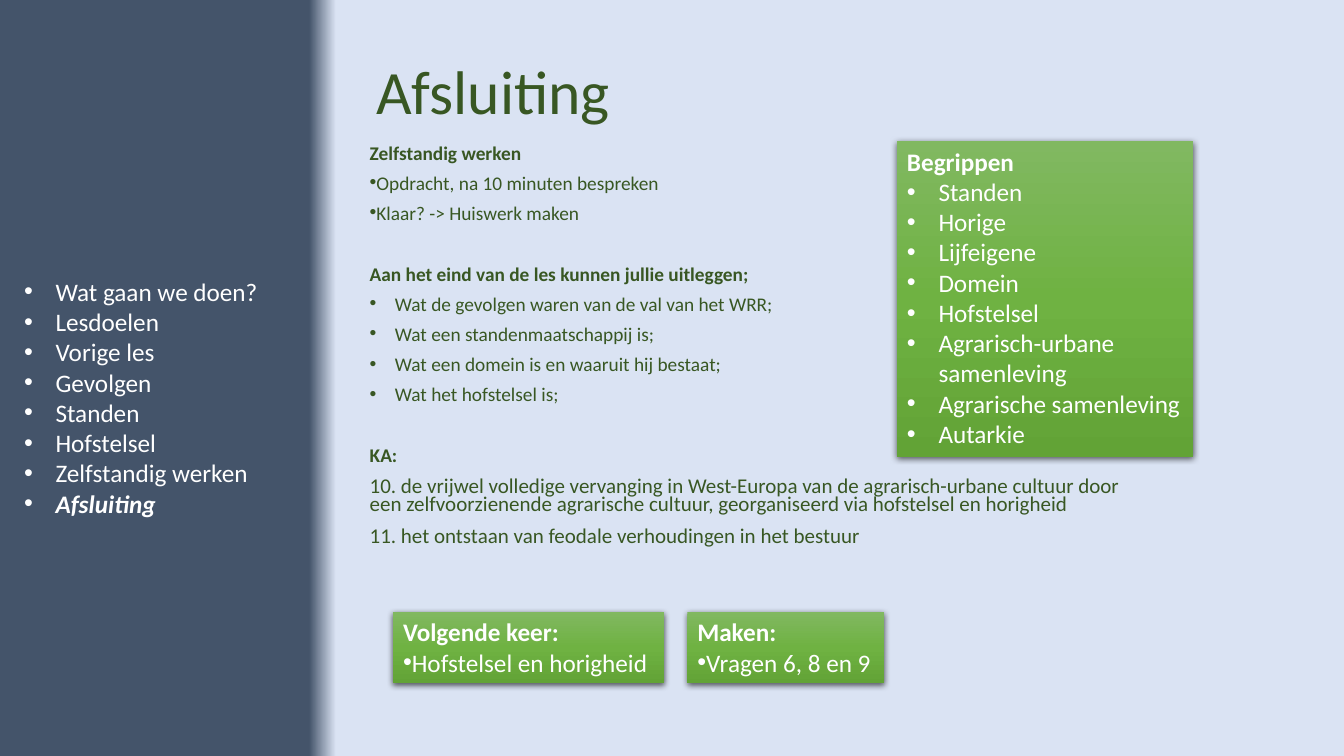
"""Builds the closing slide of a history lesson."""
from dataclasses import dataclass

from lxml import etree
from pptx import Presentation
from pptx.dml.color import RGBColor
from pptx.enum import shapes, text
from pptx.oxml.ns import qn
from pptx.util import Pt


@dataclass(frozen=True)
class Theme:
    """Colours and type sizes."""
    font: str = "Calibri"
    dark_green: str = "385723"
    white: str = "FFFFFF"
    background: tuple = ((23, "44546A"), (25, "DAE3F3"))
    box: tuple = ((0, "81B861"), (50, "6FB242"), (100, "62A336"))
    title: float = 44
    label: float = 18
    body: float = 13.8
    feature: float = 15


@dataclass(frozen=True)
class Line:
    """One paragraph with its formatting."""
    text: str
    bullet: bool = False
    indent: float = 0
    bold: bool = False
    italic: bool = False
    size: float = Theme.label
    before: float = 0


THEME = Theme()
LIST_INDENT = 22.5
GOAL_INDENT = 18
BODY_GAP = 10
SECTION_GAP = 31.6

AGENDA = ["Wat gaan we doen?", "Lesdoelen", "Vorige les", "Gevolgen", "Standen",
          "Hofstelsel", "Zelfstandig werken"]
CONCEPTS = ["Standen", "Horige", "Lijfeigene", "Domein", "Hofstelsel",
            "Agrarisch-urbane\nsamenleving", "Agrarische samenleving", "Autarkie"]
TASKS = ["Opdracht, na 10 minuten bespreken", "Klaar? -> Huiswerk maken"]
GOALS = ["Wat de gevolgen waren van de val van het WRR;",
         "Wat een standenmaatschappij is;",
         "Wat een domein is en waaruit hij bestaat;",
         "Wat het hofstelsel is;"]
FEATURES = ["10. de vrijwel volledige vervanging in West-Europa van de agrarisch-urbane "
            "cultuur door een zelfvoorzienende agrarische cultuur, georganiseerd via "
            "hofstelsel en horigheid",
            "11. het ontstaan van feodale verhoudingen in het bestuur"]


def bullets(items, indent=LIST_INDENT, **style):
    """Return a bulleted line for each item."""
    return [Line(item, True, indent, **style) for item in items]


def set_gradient(fill, element, stops, angle):
    """Give a fill the listed gradient stops."""
    fill.gradient()
    fill.gradient_angle = angle
    stop_list = element.find(".//" + qn("a:gsLst"))
    for stop in list(stop_list):
        stop_list.remove(stop)
    for position, colour in stops:
        stop = etree.SubElement(stop_list, qn("a:gs"), pos=str(position * 1000))
        etree.SubElement(stop, qn("a:srgbClr"), val=colour)


def add_shadow(shape):
    """Add a soft shadow below a shape."""
    shape.shadow.inherit = False
    effects = shape._element.spPr.find(qn("a:effectLst"))
    shadow = etree.SubElement(effects, qn("a:outerShdw"), blurRad=str(Pt(4.5)),
                              dist=str(Pt(1.5)), dir="5400000", rotWithShape="0")
    colour = etree.SubElement(shadow, qn("a:srgbClr"), val="000000")
    etree.SubElement(colour, qn("a:alpha"), val="63000")


def format_runs(paragraph, colour, size, bold=False, italic=False):
    """Apply the font settings to each run."""
    for run in paragraph.runs:
        font = run.font
        font.name, font.size = THEME.font, Pt(size)
        font.bold, font.italic = bold, italic
        font.color.rgb = RGBColor.from_string(colour)


def write_lines(frame, lines, colour, spacing=1.0):
    """Fill a text frame with formatted lines."""
    frame.vertical_anchor = text.MSO_ANCHOR.TOP
    for index, line in enumerate(lines):
        paragraph = frame.add_paragraph() if index else frame.paragraphs[0]
        paragraph.text = line.text
        paragraph.alignment = text.PP_ALIGN.LEFT
        paragraph.line_spacing = spacing
        paragraph.space_before = Pt(line.before if index else 0)
        if line.bullet:
            properties = paragraph._p.get_or_add_pPr()
            properties.set("marL", str(Pt(line.indent)))
            properties.set("indent", str(-Pt(line.indent)))
            etree.SubElement(properties, qn("a:buFont"), typeface="Arial")
            etree.SubElement(properties, qn("a:buChar"), char="•")
        format_runs(paragraph, colour, line.size, line.bold, line.italic)


def add_title(slide, title):
    """Place and format the slide title."""
    shape = slide.shapes.title
    shape.left, shape.top, shape.width, shape.height = Pt(261.4), Pt(15), Pt(662.4), Pt(104.4)
    frame = shape.text_frame
    frame.text = title
    frame.vertical_anchor = text.MSO_ANCHOR.MIDDLE
    paragraph = frame.paragraphs[0]
    paragraph.alignment = text.PP_ALIGN.LEFT
    paragraph.line_spacing = 0.9
    format_runs(paragraph, THEME.dark_green, THEME.title)


def add_text(slide, bounds, lines, colour, spacing=1.0, wrap=True):
    """Add a plain text box."""
    shape = slide.shapes.add_textbox(*map(Pt, bounds))
    shape.text_frame.word_wrap = wrap
    write_lines(shape.text_frame, lines, colour, spacing)


def add_green_box(slide, bounds, heading, lines):
    """Add a shaded box with a bold heading."""
    shape = slide.shapes.add_shape(shapes.MSO_SHAPE.RECTANGLE, *map(Pt, bounds))
    set_gradient(shape.fill, shape._element, THEME.box, 270)
    shape.line.fill.background()
    add_shadow(shape)
    shape.text_frame.word_wrap = False
    write_lines(shape.text_frame, [Line(heading, bold=True), *lines], THEME.white)


def body_lines():
    """Return the lines of the main text."""
    small = {"size": THEME.body, "before": BODY_GAP}
    section = {"size": THEME.body, "before": SECTION_GAP, "bold": True}
    return [Line("Zelfstandig werken", **section),
            *bullets(TASKS, 0, **small),
            Line("Aan het eind van de les kunnen jullie uitleggen;", **section),
            *bullets(GOALS, GOAL_INDENT, **small),
            Line("KA:", **section),
            *[Line(item, size=THEME.feature, before=BODY_GAP) for item in FEATURES]]


def main():
    """Build and save the slide."""
    presentation = Presentation()
    presentation.slide_width, presentation.slide_height = Pt(960), Pt(540)
    slide = presentation.slides.add_slide(presentation.slide_layouts[5])
    set_gradient(slide.background.fill, slide._element, THEME.background, 0)
    add_title(slide, "Afsluiting")
    add_green_box(slide, (280.8, 437, 193.7, 51), "Volgende keer:",
                  bullets(["Hofstelsel en horigheid"], 0))
    add_green_box(slide, (491, 437, 140.4, 51), "Maken:", bullets(["Vragen 6, 8 en 9"], 0))
    agenda = bullets(AGENDA) + bullets(["Afsluiting"], bold=True, italic=True)
    add_text(slide, (10.1, 193.7, 185, 181.4), agenda, THEME.white, wrap=False)
    add_text(slide, (257, 101.5, 569.5, 344.2), body_lines(), THEME.dark_green, 0.7)
    add_green_box(slide, (640.8, 100.8, 211.7, 225.4), "Begrippen", bullets(CONCEPTS))
    presentation.save("out.pptx")


if __name__ == "__main__":
    main()
